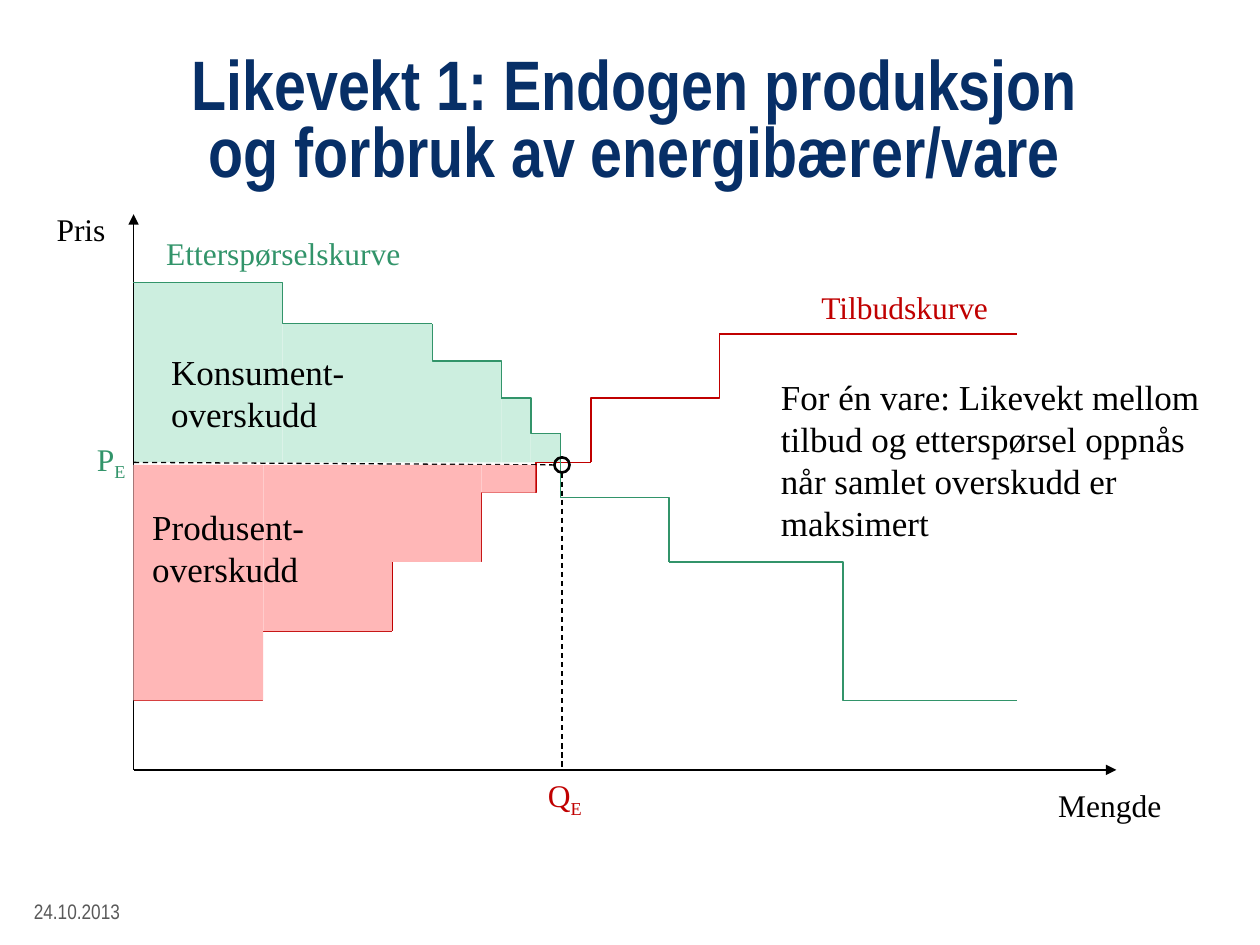
from collections import namedtuple
from itertools import pairwise

from lxml import etree
from pptx import Presentation
from pptx.dml.color import RGBColor
from pptx.enum import dml, shapes, text
from pptx.oxml import ns
from pptx.util import Inches, Pt

NAVY = RGBColor(0x07, 0x2F, 0x67)
GREY = RGBColor(0x59, 0x59, 0x59)
BLACK = RGBColor(0, 0, 0)
RED = RGBColor(0xC0, 0, 0)
GREEN = RGBColor(0x32, 0x94, 0x6A)
PALE_GREEN = RGBColor(0xCC, 0xEE, 0xDF)
PALE_RED = RGBColor(0xFF, 0xB7, 0xB7)
SANS, SERIF = "Arial Narrow", "Times New Roman"

Box = namedtuple("Box", "left top width height")

DEMAND = [(0, 3.87), (2.37, 3.54), (2.92, 2.95), (3.39, 2.67), (4.25, 1.65), (7.01, 0.55)]
SUPPLY = [(0, 0.55), (2.05, 1.1), (2.76, 2.2), (3.63, 2.44), (4.65, 3.46)]
SUPPLY_END = (7.01, 3.46)
CONSUMER_EDGES = [0, 1.18, 2.37, 2.92, 3.15, 3.39]
CONSUMER_PRICES = [3.87, 3.54, 3.25, 2.95, 2.67]
PRODUCER_EDGES = [0, 1.03, 2.05, 2.76, 3.19]
PRODUCER_PRICES = [0.55, 1.1, 1.65, 2.2]
EQUILIBRIUM = (3.4, 2.42)
RADIUS = 0.06


def add_text(page, box, words, size=18, color=BLACK, font=SERIF, subscript=None, wrap=False):
    shape = page.shapes.add_textbox(*map(Inches, box))
    frame = shape.text_frame
    frame.word_wrap = wrap
    para = frame.paragraphs[0]
    for part in filter(None, (words, subscript)):
        span = para.add_run()
        span.text = part
        span.font.size = Pt(size)
        span.font.name = font
        span.font.color.rgb = color
        if part == subscript:
            span.font._element.set("baseline", "-25000")
    return shape


def add_line(page, start, end, color=BLACK, width=0.75, kind=shapes.MSO_CONNECTOR.STRAIGHT):
    line = page.shapes.add_connector(kind, *map(Inches, (*start, *end)))
    line.line.color.rgb = color
    line.line.width = Pt(width)
    etree.SubElement(line._element.spPr, ns.qn("a:effectLst"))
    return line


def add_step(page, start, end, color, vertical):
    elbow = shapes.MSO_CONNECTOR.ELBOW
    if not vertical:
        add_line(page, start, end, color, kind=elbow)
        return
    (x1, y1), (x2, y2) = start, end
    mid_x, mid_y = (x1 + x2) / 2, (y1 + y2) / 2
    half_x, half_y = (x2 - x1) / 2, (y2 - y1) / 2
    line = add_line(page, (mid_x - half_y, mid_y + half_x),
                    (mid_x + half_y, mid_y - half_x), color, kind=elbow)
    line._element.spPr.find(ns.qn("a:xfrm")).set("rot", str(90 * 60000))


def plot_point(box, point):
    return box.left + point[0], box.top + box.height - point[1]


def add_curve(page, box, points, color):
    for index, (start, end) in enumerate(pairwise(points)):
        add_step(page, plot_point(box, start), plot_point(box, end), color, index % 2 == 1)


def add_surplus(page, box, edges, prices, base, color):
    for (left, right), price in zip(pairwise(edges), prices):
        x, y = plot_point(box, (left, max(price, base)))
        bar = page.shapes.add_shape(shapes.MSO_SHAPE.RECTANGLE, *map(
            Inches, (x, y, right - left, abs(price - base))))
        bar.shadow.inherit = False
        bar.fill.solid()
        bar.fill.fore_color.rgb = color
        bar.line.fill.background()


def add_axes(page, box):
    origin = plot_point(box, (0, 0))
    for tip in ((0, box.height), (box.width, 0)):
        axis = add_line(page, origin, plot_point(box, tip), width=1)
        etree.SubElement(axis.line._get_or_add_ln(), ns.qn("a:tailEnd"), type="triangle")


def add_equilibrium(page, box):
    x, y = plot_point(box, EQUILIBRIUM)
    circle = page.shapes.add_shape(shapes.MSO_SHAPE.OVAL, *map(
        Inches, (x - RADIUS, y - RADIUS, 2 * RADIUS, 2 * RADIUS)))
    circle.shadow.inherit = False
    circle.fill.background()
    circle.line.color.rgb = BLACK
    circle.line.width = Pt(1.5)
    guides = [((x - RADIUS, y), plot_point(box, (0, 2.44))),
              ((x, y + RADIUS), (x, box.top + box.height))]
    for start, end in guides:
        add_line(page, start, end).line.dash_style = dml.MSO_LINE.DASH


def add_labels(page, box):
    labels = [
        (-0.71, -0.08, 0.59, "Pris", BLACK, None),
        (7.24, 4.49, 1.03, "Mengde", BLACK, None),
        (5.36, 0.54, 1.54, "Tilbudskurve", RED, None),
        (0.16, 0.11, 2.08, "Etterspørselskurve", GREEN, None),
        (-0.39, 1.74, 0.45, "P", GREEN, "E"),
        (3.19, 4.41, 0.49, "Q", RED, "E"),
    ]
    for x, y, width, words, color, subscript in labels:
        add_text(page, (box.left + x, box.top + y, width, 0.4), words,
                 color=color, subscript=subscript)
    notes = [
        (0.2, 1.03, 2.01, 0.77, "Konsument-overskudd"),
        (0.05, 2.26, 2.01, 0.77, "Produsent-overskudd"),
        (5.04, 1.23, 3.54, 1.45,
         "For én vare: Likevekt mellom tilbud og etterspørsel oppnås når samlet overskudd er maksimert"),
    ]
    for x, y, width, height, words in notes:
        add_text(page, (box.left + x, box.top + y, width, height), words, size=20, wrap=True)


def add_market(page, box):
    add_surplus(page, box, CONSUMER_EDGES, CONSUMER_PRICES, 2.44, PALE_GREEN)
    add_axes(page, box)
    add_curve(page, box, SUPPLY, RED)
    add_line(page, plot_point(box, SUPPLY[-1]), plot_point(box, SUPPLY_END), RED)
    add_curve(page, box, DEMAND, GREEN)
    add_equilibrium(page, box)
    add_surplus(page, box, PRODUCER_EDGES, PRODUCER_PRICES, 2.42, PALE_RED)
    add_labels(page, box)


def add_title(page, box):
    title = add_text(page, box, "Likevekt 1: Endogen produksjon og forbruk av energibærer/vare",
                     size=40, color=NAVY, font=SANS, wrap=True)
    title.text_frame.vertical_anchor = text.MSO_ANCHOR.MIDDLE
    para = title.text_frame.paragraphs[0]
    para.alignment = text.PP_ALIGN.CENTER
    para.line_spacing = 0.8
    para.runs[0].font.bold = True


def main():
    deck = Presentation()
    deck.slide_width, deck.slide_height = Inches(10), Inches(7.5)
    page = deck.slides.add_slide(deck.slide_layouts[6])
    add_title(page, Box(1.17, 0.44, 7.73, 1.08))
    add_market(page, Box(1.06, 1.7, 7.8, 4.41))
    add_text(page, Box(0.17, 7.08, 1.25, 0.33), "24.10.2013", size=12, color=GREY,
             font=SANS, wrap=True)
    deck.save("out.pptx")


if __name__ == "__main__":
    main()
